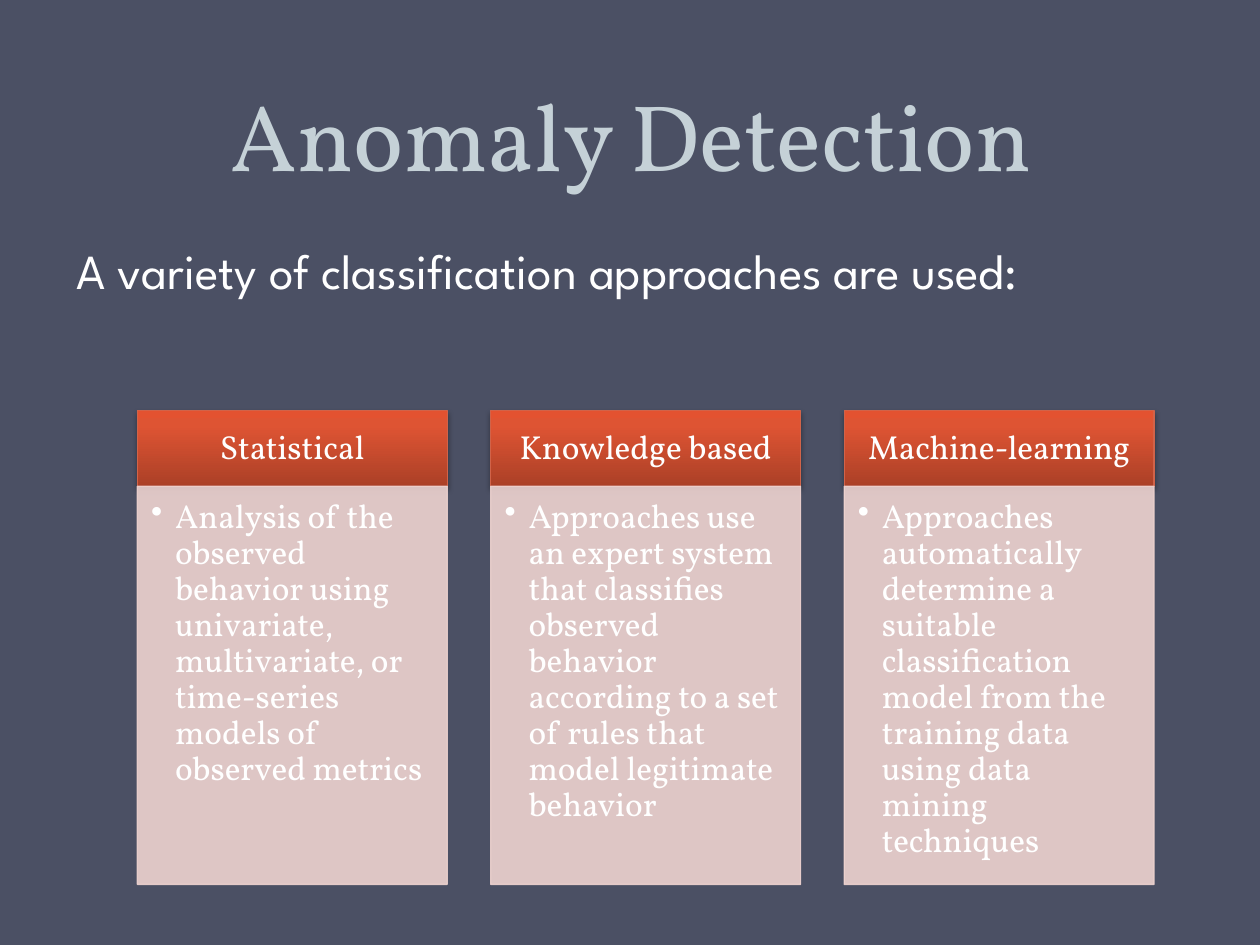
from copy import deepcopy

from lxml.etree import SubElement
from pptx import Presentation
from pptx.dml.color import RGBColor
from pptx.enum.shapes import MSO_SHAPE
from pptx.enum.text import MSO_ANCHOR, MSO_AUTO_SIZE, PP_ALIGN
from pptx.oxml.ns import qn
from pptx.util import Inches, Pt

SLATE = RGBColor(0x4B, 0x50, 0x64)
MIST = RGBColor(0xC5, 0xD1, 0xD7)
WHITE = RGBColor(0xFF, 0xFF, 0xFF)
RUST = RGBColor(0xD1, 0x63, 0x49)
BLUSH = RGBColor(0xEE, 0xD3, 0xD0)
BLACK = RGBColor(0, 0, 0)
GLOW = [
    (0, RGBColor(0xAB, 0x40, 0x27)),
    (0.8, RGBColor(0xDE, 0x54, 0x33)),
    (1, RGBColor(0xE3, 0x52, 0x30)),
]
SERIF, SANS = "Vollkorn", "League Spartan"

CARDS = [
    ("Statistical",
     "Analysis of the observed behavior using univariate, multivariate, "
     "or time-series models of observed metrics"),
    ("Knowledge based",
     "Approaches use an expert system that classifies observed behavior "
     "according to a set of rules that model legitimate behavior"),
    ("Machine-learning",
     "Approaches automatically determine a suitable classification model "
     "from the training data using data mining techniques"),
]


def write(shape, text, font, size, color, align, anchor):
    """Set the text of a shape in one style and return its paragraph."""
    frame = shape.text_frame
    frame.text = text
    frame.word_wrap = True
    frame.auto_size = MSO_AUTO_SIZE.NONE
    frame.vertical_anchor = anchor
    para = frame.paragraphs[0]
    para.alignment = align
    style = para.runs[0].font
    style.name, style.size, style.color.rgb = font, Pt(size), color
    return para


def inset(shape, left, top, right, bottom):
    """Set the text margins of a shape in inches."""
    frame = shape.text_frame
    frame.margin_left, frame.margin_top = Inches(left), Inches(top)
    frame.margin_right, frame.margin_bottom = Inches(right), Inches(bottom)


def fade(color, share):
    """Give a colour element an opacity in percent."""
    SubElement(color, qn("a:alpha")).set("val", str(share * 1000))


def panel(slide, x, y, w, h, edge):
    """Add an outlined rectangle without a shadow."""
    rect = slide.shapes.add_shape(
        MSO_SHAPE.RECTANGLE, Inches(x), Inches(y), Inches(w), Inches(h))
    rect.shadow.inherit = False
    rect.line.color.rgb = edge
    rect.line.width = Pt(0.75)
    return rect


def shade(rect):
    """Fill a rectangle with the upward gradient and drop a soft shadow."""
    rect.fill.gradient()
    rect.fill.gradient_angle = 90
    props = rect.element.spPr
    stops = props.find(".//" + qn("a:gsLst"))
    stops.append(deepcopy(stops[-1]))
    for stop, (place, color) in zip(rect.fill.gradient_stops, GLOW):
        stop.position, stop.color.rgb = place, color
    drop = SubElement(props.find(qn("a:effectLst")), qn("a:outerShdw"))
    for key, value in [("blurRad", Pt(3.1)), ("dist", Pt(1.8)),
                       ("dir", 5400000), ("rotWithShape", 0)]:
        drop.set(key, str(value))
    tint = SubElement(drop, qn("a:srgbClr"))
    tint.set("val", str(BLACK))
    fade(tint, 35)


def bullet(para, gap):
    """Give a paragraph a bullet with a hanging indent in inches."""
    props = para._p.get_or_add_pPr()
    props.set("marL", str(Inches(gap)))
    props.set("indent", str(-Inches(gap)))
    SubElement(props, qn("a:buChar")).set("char", "•")


def add_title(slide, x, y, w, h):
    """Place the slide title."""
    title = slide.shapes.title
    title.left, title.top = Inches(x), Inches(y)
    title.width, title.height = Inches(w), Inches(h)
    para = write(title, "Anomaly Detection", SERIF, 54, MIST,
                 PP_ALIGN.CENTER, MSO_ANCHOR.BOTTOM)
    para.line_spacing = Pt(58)


def add_lead(slide, x, y, w, h):
    """Place the line that introduces the cards."""
    box = slide.shapes.add_textbox(Inches(x), Inches(y), Inches(w), Inches(h))
    para = write(box, "A variety of classification approaches are used:",
                 SANS, 28, WHITE, PP_ALIGN.LEFT, MSO_ANCHOR.TOP)
    para.space_before = Pt(5.6)


def add_card(slide, x, y, w, h, name, text):
    """Place one card: a header band above a body panel."""
    band = 0.6
    head = panel(slide, x, y, w, band, RUST)
    shade(head)
    inset(head, 0.15, 0.08, 0.15, 0.08)
    para = write(head, name, SERIF, 19, WHITE,
                 PP_ALIGN.CENTER, MSO_ANCHOR.MIDDLE)
    para.line_spacing = 0.9

    body = panel(slide, x, y + band, w, h - band, BLUSH)
    body.fill.solid()
    body.fill.fore_color.rgb = BLUSH
    for color in body.element.spPr.iter(qn("a:srgbClr")):
        fade(color, 90)
    inset(body, 0.11, 0.11, 0.15, 0.17)
    para = write(body, text, SERIF, 19, WHITE, PP_ALIGN.LEFT, MSO_ANCHOR.TOP)
    para.line_spacing = 0.9
    bullet(para, 0.19)


def add_cards(slide, x, y, w, h):
    """Spread the cards evenly over a box."""
    wide = 2.46
    step = (w - wide) / (len(CARDS) - 1)
    for i, (name, text) in enumerate(CARDS):
        add_card(slide, x + i * step, y, wide, h, name, text)


def main():
    """Build the slide and save it."""
    deck = Presentation()
    deck.slide_width, deck.slide_height = Inches(10), Inches(7.5)
    slide = deck.slides.add_slide(deck.slide_layouts[5])
    slide.background.fill.solid()
    slide.background.fill.fore_color.rgb = SLATE
    add_title(slide, 0.51, -0.19, 9, 1.75)
    add_lead(slide, 0.51, 1.86, 9, 1.06)
    add_cards(slide, 1.09, 3.26, 8.07, 3.76)
    deck.save("out.pptx")


if __name__ == "__main__":
    main()
